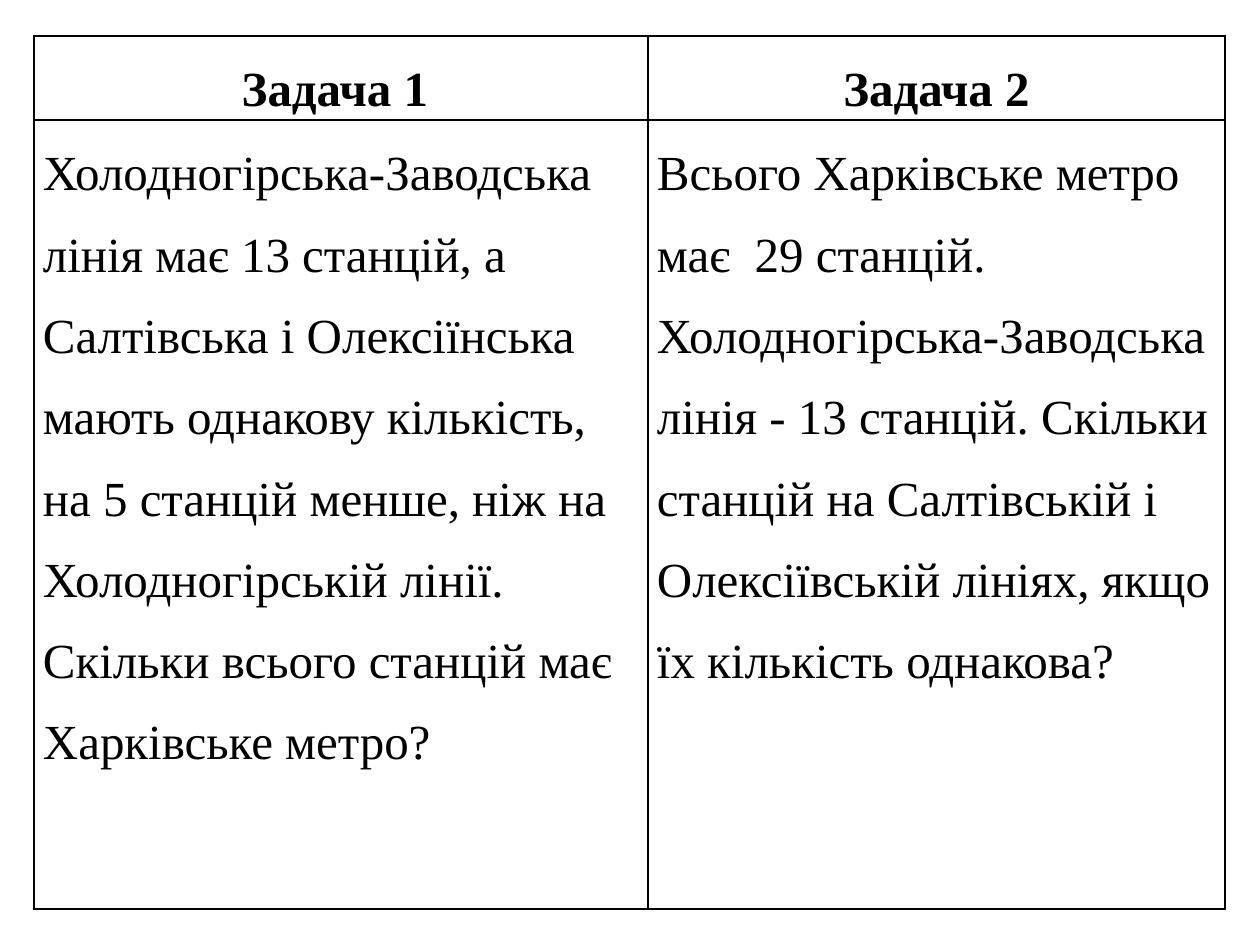
from dataclasses import dataclass

from lxml.etree import SubElement
from pptx import Presentation
from pptx.dml.color import RGBColor
from pptx.enum.text import PP_ALIGN
from pptx.oxml.ns import qn
from pptx.util import Pt

SCALE = 914400 / 126


def px(n):
    return round(n * SCALE)


@dataclass(frozen=True)
class Theme:
    font: str = "Times New Roman"
    size: int = 28
    ink: str = "000000"
    paper: str = "FFFFFF"
    rule: int = 1
    lead: float = 1.5
    pad: int = 9


class Page:
    def __init__(self, slide, theme):
        self.slide = slide
        self.theme = theme

    def back(self):
        fill = self.slide.background.fill
        fill.solid()
        fill.fore_color.rgb = RGBColor.from_string(self.theme.paper)

    def table(self, left, top, cols, rows, data):
        frame = self.slide.shapes.add_table(
            len(rows), len(cols), px(left), px(top), px(sum(cols)), px(sum(rows)))
        grid = frame.table
        for col, width in zip(grid.columns, cols):
            col.width = px(width)
        for row, height in zip(grid.rows, rows):
            row.height = px(height)
        for r, line in enumerate(data):
            for c, text in enumerate(line):
                self.cell(grid.cell(r, c), text, head=r == 0)

    def cell(self, cell, text, head):
        cell.margin_left = cell.margin_right = px(self.theme.pad)
        cell.margin_top = cell.margin_bottom = 0
        self.edge(cell)
        cell.fill.background()
        para = cell.text_frame.paragraphs[0]
        para.alignment = PP_ALIGN.CENTER if head else PP_ALIGN.LEFT
        para.line_spacing = self.theme.lead
        self.run(para, text, head)

    def run(self, para, text, bold):
        run = para.add_run()
        run.text = text
        font = run.font
        font.name = self.theme.font
        font.size = Pt(self.theme.size)
        font.bold = bold
        font.color.rgb = RGBColor.from_string(self.theme.ink)

    def edge(self, cell):
        props = cell._tc.get_or_add_tcPr()
        for side in ("lnL", "lnR", "lnT", "lnB"):
            line = SubElement(props, qn(f"a:{side}"), w=str(Pt(self.theme.rule)))
            fill = SubElement(line, qn("a:solidFill"))
            SubElement(fill, qn("a:srgbClr"), val=self.theme.ink)


TASKS = [
    ["Задача 1 ", "Задача 2"],
    [
        "Холодногірська-Заводська лінія має 13 станцій, а Салтівська і "
        "Олексіїнська мають однакову кількість, на 5 станцій менше, ніж на "
        "Холодногірській лінії. Скільки всього станцій має Харківське метро?",
        "Всього Харківське метро має  29 станцій. Холодногірська-Заводська "
        "лінія - 13 станцій. Скільки станцій на Салтівській і Олексіївській "
        "лініях, якщо їх кількість однакова?",
    ],
]


def main():
    deck = Presentation()
    deck.slide_width, deck.slide_height = px(1260), px(945)
    page = Page(deck.slides.add_slide(deck.slide_layouts[6]), Theme())
    page.back()

    # Two tasks side by side, headings above
    page.table(34, 36, cols=[614, 577], rows=[84, 789], data=TASKS)
    deck.save("out.pptx")


if __name__ == "__main__":
    main()
